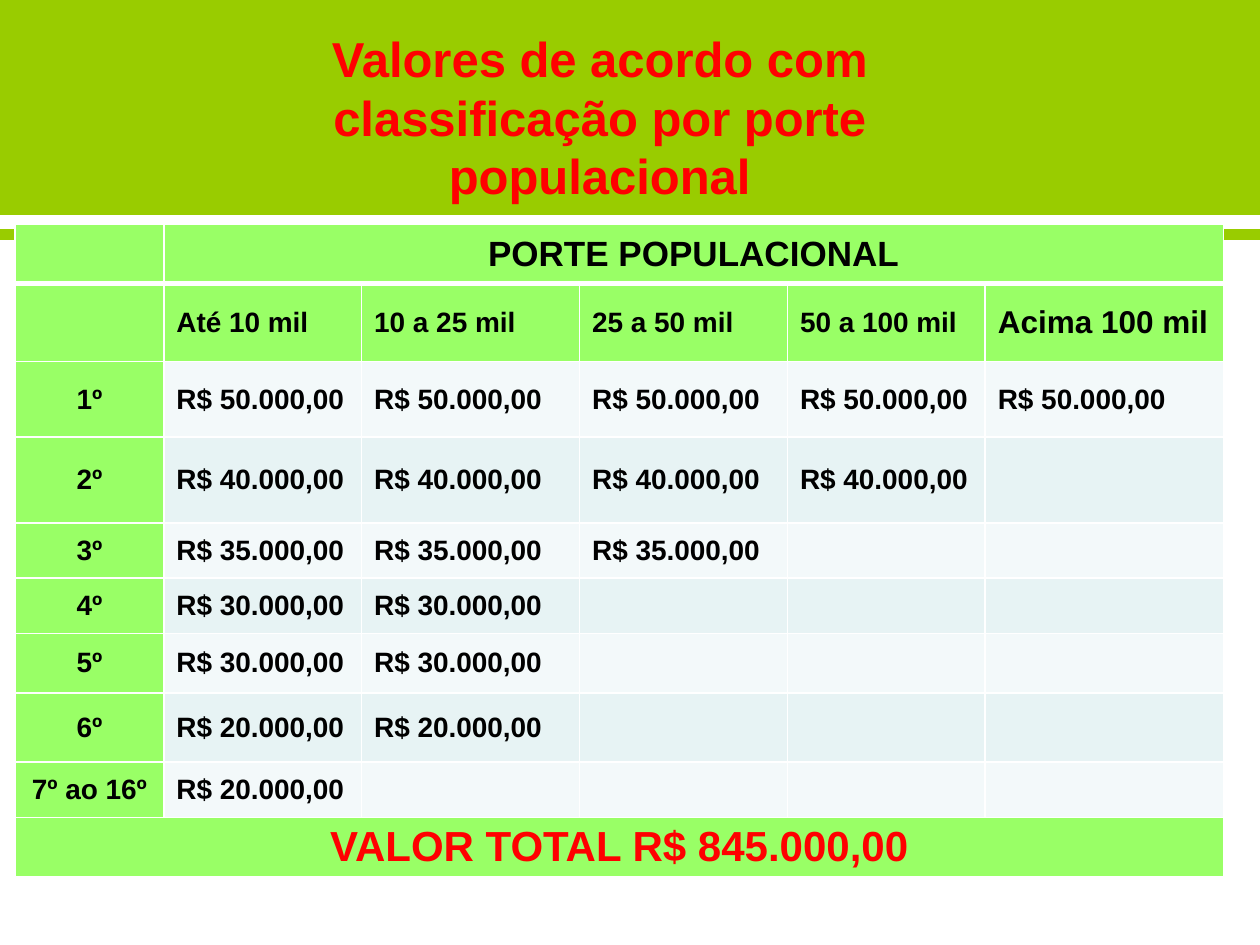
from lxml import etree
from pptx import Presentation
from pptx.dml.color import RGBColor
from pptx.enum.shapes import MSO_CONNECTOR, MSO_SHAPE
from pptx.enum.text import MSO_ANCHOR, MSO_AUTO_SIZE, PP_ALIGN
from pptx.oxml.ns import qn
from pptx.util import Inches, Pt

CENTER, LEFT = PP_ALIGN.CENTER, PP_ALIGN.LEFT
MIDDLE = MSO_ANCHOR.MIDDLE
COLORS = {"band": "99CC00", "heading": "99FF66", "odd": "F3F9FA",
          "even": "E7F3F4", "border": "FFFFFF", "text": "000000", "accent": "FF0000"}

# Content
TITLE = "Valores de acordo com classificação por porte populacional"
TABLE_HEADING = "PORTE POPULACIONAL"
SIZE_CLASSES = ["Até 10 mil", "10 a 25 mil", "25 a 50 mil", "50 a 100 mil", "Acima 100 mil"]
# Instalment, amount, number of size classes that receive it
INSTALMENTS = [
    ("1º", "R$ 50.000,00", 5),
    ("2º", "R$ 40.000,00", 4),
    ("3º", "R$ 35.000,00", 3),
    ("4º", "R$ 30.000,00", 2),
    ("5º", "R$ 30.000,00", 2),
    ("6º", "R$ 20.000,00", 2),
    ("7º ao 16º", "R$ 20.000,00", 1),
]
TOTAL = "VALOR TOTAL R$ 845.000,00"
COLUMN_WIDTHS = [1.18, 1.57, 1.73, 1.65, 1.57, 1.89]
ROW_HEIGHTS = [0.47, 0.62, 0.6, 0.68, 0.44, 0.44, 0.47, 0.55, 0.44, 0.44]


def rgb(name):
    return RGBColor.from_string(COLORS[name])


def write(frame, text, size, color="text", align=LEFT):
    paragraph = frame.paragraphs[0]
    paragraph.text = text
    paragraph.alignment = align
    font_format = {"name": "Arial", "size": Pt(size), "bold": True}
    for attribute, value in font_format.items():
        setattr(paragraph.font, attribute, value)
    paragraph.font.color.rgb = rgb(color)


def style_cell(cell, fill, bottom_width=1):
    cell.vertical_anchor = MIDDLE
    cell.fill.solid()
    cell.fill.fore_color.rgb = rgb(fill)
    properties = cell._tc.get_or_add_tcPr()
    widths = {"a:lnL": 1, "a:lnR": 1, "a:lnT": 1, "a:lnB": bottom_width}
    for position, (tag, width) in enumerate(widths.items()):
        border = etree.Element(qn(tag), w=str(Pt(width)))
        solid = etree.SubElement(border, qn("a:solidFill"))
        etree.SubElement(solid, qn("a:srgbClr"), val=COLORS["border"])
        properties.insert(position, border)


prs = Presentation()
prs.slide_width, prs.slide_height = Inches(10), Inches(7.5)
slide = prs.slides.add_slide(prs.slide_layouts[5])
shapes = slide.shapes

# Top band and rule
band = shapes.add_shape(MSO_SHAPE.RECTANGLE, 0, 0, Inches(10), Inches(1.7))
band.shadow.inherit = False
band.fill.solid()
band.fill.fore_color.rgb = rgb("band")
band.line.color.rgb = rgb("band")
band.line.width = Pt(0.75)

rule = shapes.add_connector(MSO_CONNECTOR.STRAIGHT, 0, Inches(1.86), Inches(10), Inches(1.86))
rule.line.color.rgb = rgb("band")
rule.line.width = Pt(6)
etree.SubElement(rule._element.spPr, qn("a:effectLst"))

# Title, brought in front of the band
title = shapes.title
title.left, title.top, title.width, title.height = map(Inches, (1.48, 0.3, 6.56, 1.25))
title.text_frame.auto_size = MSO_AUTO_SIZE.NONE
title.text_frame.vertical_anchor = MIDDLE
write(title.text_frame, TITLE, 28, "accent", CENTER)
shapes._spTree.append(title._element)

# Table grid
last_row, last_column = len(ROW_HEIGHTS) - 1, len(COLUMN_WIDTHS) - 1
table = shapes.add_table(last_row + 1, last_column + 1, Inches(0.12), Inches(1.78),
                         Inches(sum(COLUMN_WIDTHS)), Inches(sum(ROW_HEIGHTS))).table
for column, width in zip(table.columns, COLUMN_WIDTHS):
    column.width = Inches(width)
for row, height in zip(table.rows, ROW_HEIGHTS):
    row.height = Inches(height)
for r in range(last_row + 1):
    for c in range(last_column + 1):
        is_heading = r < 2 or r == last_row or c == 0
        fill = "heading" if is_heading else ("even" if r % 2 else "odd")
        style_cell(table.cell(r, c), fill, 3 if r == 0 else 1)

# Table text
table.cell(0, 1).merge(table.cell(0, last_column))
write(table.cell(0, 1).text_frame, TABLE_HEADING, 20, align=CENTER)
for c, size_class in enumerate(SIZE_CLASSES, 1):
    write(table.cell(1, c).text_frame, size_class, 18 if c == last_column else 16)
for r, (instalment, amount, count) in enumerate(INSTALMENTS, 2):
    write(table.cell(r, 0).text_frame, instalment, 16, align=CENTER)
    for c in range(1, count + 1):
        write(table.cell(r, c).text_frame, amount, 16)
table.cell(last_row, 0).merge(table.cell(last_row, last_column))
write(table.cell(last_row, 0).text_frame, TOTAL, 24, "accent", CENTER)

prs.save("out.pptx")
